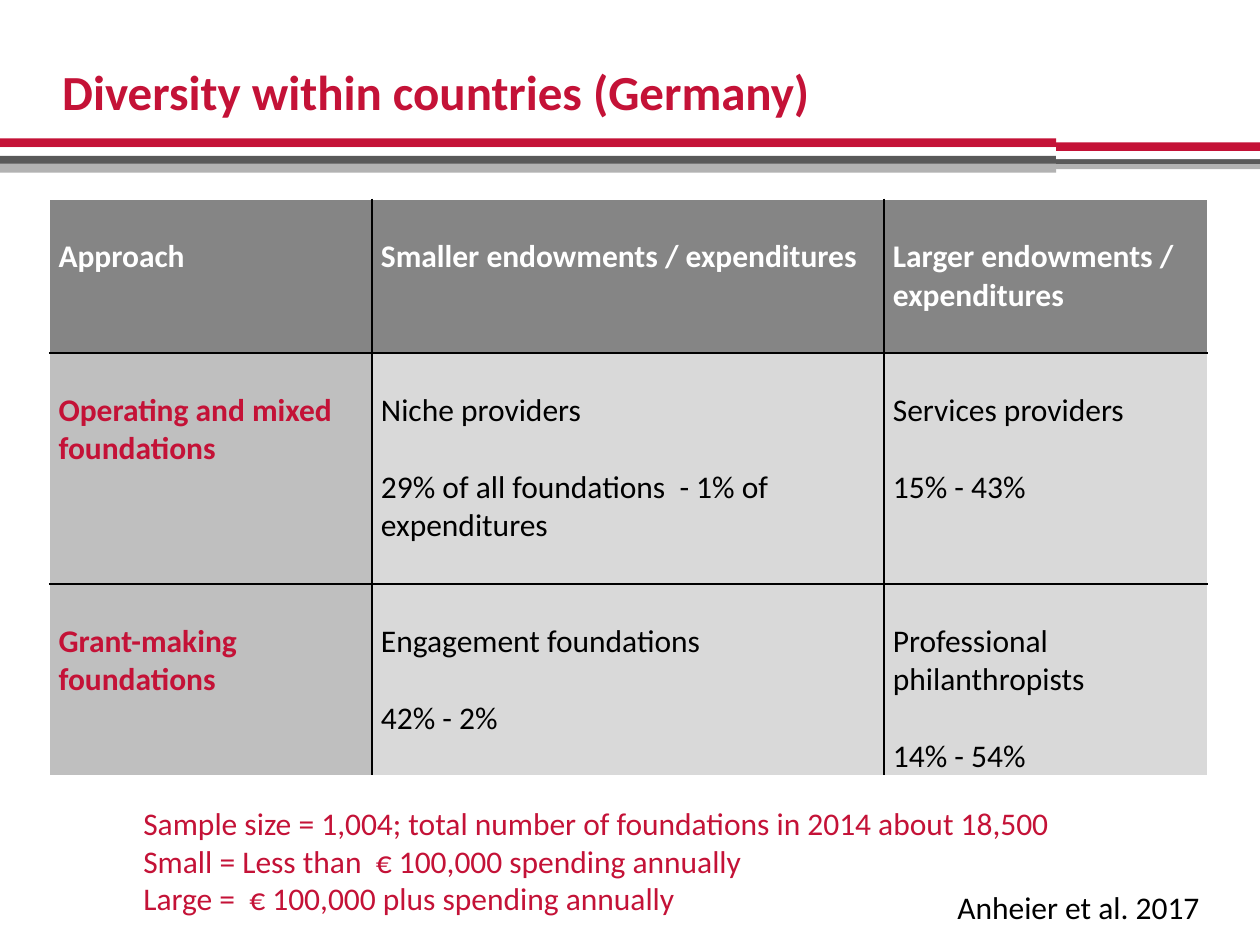
from lxml import etree
from pptx import Presentation
from pptx import util as u
from pptx.dml.color import RGBColor
from pptx.enum import shapes, text
from pptx.oxml.ns import qn

RED, BLACK, WHITE = "C41237", "000000", "FFFFFF"
DARK, LIGHT = "595959", "B2B2B2"


def write(frame, words, size=18, color=BLACK, bold=False, gap=0):
    """Fill a frame with one paragraph per line, gap points apart."""
    frame.word_wrap = True
    for i, line in enumerate(words.split("\n")):
        par = frame.paragraphs[0] if i == 0 else frame.add_paragraph()
        par.alignment = text.PP_ALIGN.LEFT
        if i:
            par.space_before = u.Pt(gap)
        run = par.add_run()
        run.text = line
        run.font.name = "Calibri"
        run.font.size = u.Pt(size)
        run.font.bold = bold
        run.font.color.rgb = RGBColor.from_string(color)


def edge(cell, side, color):
    """Add a 1 pt border; the sides must come in the order L, R, T, B."""
    props = cell._tc.get_or_add_tcPr()
    line = etree.SubElement(props, qn("a:ln" + side), w=str(u.Pt(1)))
    fill = etree.SubElement(line, qn("a:solidFill"))
    etree.SubElement(fill, qn("a:srgbClr"), val=color)


deck = Presentation()
deck.slide_width, deck.slide_height = u.Cm(25.4), u.Cm(19.05)
slide = deck.slides.add_slide(deck.slide_layouts[5])

# Stripes under the title: left, width, then top, height, colour of each
bands = [
    (0, 21.29, [(2.79, 0.18, RED), (3.14, 0.18, DARK),
                (3.3, 0.18, LIGHT), (2.97, 0.17, WHITE)]),
    (21.29, 4.11, [(2.87, 0.18, RED), (3.21, 0.1, DARK),
                   (3.31, 0.1, LIGHT), (3.05, 0.16, WHITE)]),
]
for left, width, bars in bands:
    for top, height, color in bars:
        bar = slide.shapes.add_shape(
            shapes.MSO_SHAPE.RECTANGLE,
            u.Cm(left), u.Cm(top), u.Cm(width), u.Cm(height))
        bar.shadow.inherit = False
        bar.fill.solid()
        bar.fill.fore_color.rgb = RGBColor.from_string(color)
        bar.line.fill.background()

title = slide.shapes.title
title.left, title.top = u.Cm(1), u.Cm(1.02)
title.width, title.height = u.Cm(18.26), u.Cm(1.63)
title.text_frame.vertical_anchor = text.MSO_ANCHOR.MIDDLE
write(title.text_frame, "Diversity within countries (Germany)",
      size=28, color=RED, bold=True)

# Table of foundation types
rows = [
    ["Approach", "Smaller endowments / expenditures",
     "Larger endowments / expenditures"],
    ["Operating and mixed foundations",
     "Niche providers\n29% of all foundations  - 1% of expenditures",
     "Services providers\n15% - 43%"],
    ["Grant-making foundations", "Engagement foundations\n42% - 2%",
     "Professional philanthropists\n14% - 54%"],
]
widths, heights = [6.5, 10.32, 6.52], [3.1, 4.65, 3.87]
table = slide.shapes.add_table(
    3, 3, u.Cm(1), u.Cm(4.02), u.Cm(sum(widths)), u.Cm(sum(heights))).table
for col, width in zip(table.columns, widths):
    col.width = u.Cm(width)
for row, height in zip(table.rows, heights):
    row.height = u.Cm(height)

for r, row in enumerate(rows):
    for c, words in enumerate(row):
        if r == 0:
            fill, color = "858585", WHITE
        elif c == 0:
            fill, color = "BFBFBF", RED
        else:
            fill, color = "D9D9D9", BLACK
        cell = table.cell(r, c)
        cell.margin_left = cell.margin_right = u.Cm(0.18)
        cell.margin_top, cell.margin_bottom = u.Cm(0.77), 0
        write(cell.text_frame, words, color=color,
              bold=r == 0 or c == 0, gap=22)
        outer = {"L": c == 0, "R": c == 2, "T": r == 0, "B": r == 2}
        for side, out in outer.items():
            edge(cell, side, WHITE if out else BLACK)
        cell.fill.solid()
        cell.fill.fore_color.rgb = RGBColor.from_string(fill)

# Notes below the table
sample = ("Sample size = 1,004; total number of foundations in 2014 about 18,500\n"
          "Small = Less than  € 100,000 spending annually\n"
          "Large =  € 100,000 plus spending annually")
notes = [
    (2.64, 16.08, 19.81, 2.57, sample, RED),
    (19.05, 17.78, 5.74, 1.02, "Anheier et al. 2017", BLACK),
]
for left, top, width, height, words, color in notes:
    box = slide.shapes.add_textbox(
        u.Cm(left), u.Cm(top), u.Cm(width), u.Cm(height))
    write(box.text_frame, words, color=color)

deck.save("out.pptx")
